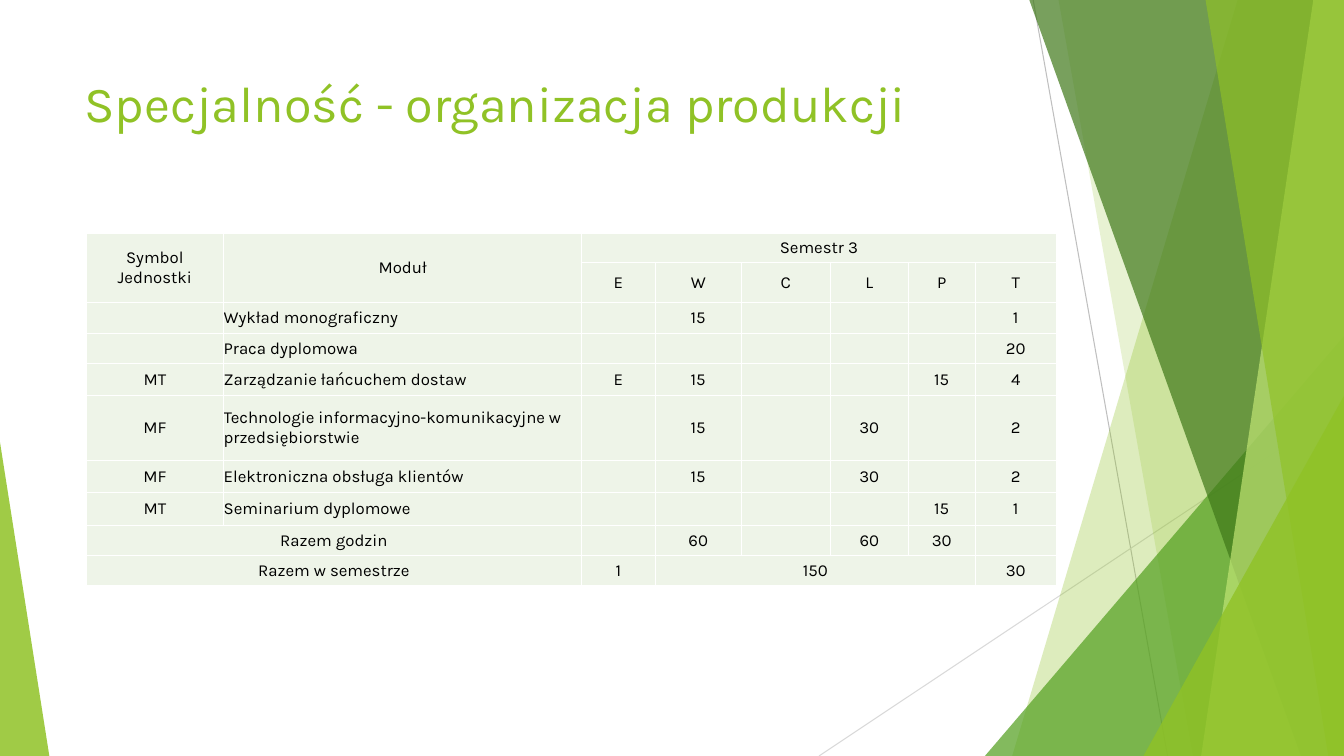
from dataclasses import dataclass

from pptx import Presentation
from pptx.dml.color import RGBColor
from pptx.enum.shapes import MSO_CONNECTOR as Connector, MSO_SHAPE as Preset
from pptx.enum.text import MSO_ANCHOR as Anchor, PP_ALIGN as Align
from pptx.oxml import parse_xml
from pptx.oxml.ns import nsdecls, qn
from pptx.oxml.xmlchemy import OxmlElement
from pptx.util import Pt

PX = 9525  # EMU in one px, 96 px to the inch
WIDTH, HEIGHT = 1280, 720
FONT = "Karla"

WHITE = RGBColor(0xFF, 0xFF, 0xFF)
BLACK = RGBColor(0, 0, 0)
GRAY = RGBColor(0xBF, 0xBF, 0xBF)
PALE_GRAY = RGBColor(0xD9, 0xD9, 0xD9)
LIME = RGBColor(0x90, 0xC2, 0x26)
PALE_LIME = RGBColor(0xC0, 0xE4, 0x74)
GREEN = RGBColor(0x54, 0xA0, 0x21)
DARK_GREEN = RGBColor(0x3F, 0x78, 0x19)
CELL_GREEN = RGBColor(0xEE, 0xF4, 0xE8)


@dataclass(frozen=True)
class Ray:
    start: tuple[int, int]
    end: tuple[int, int]
    color: RGBColor


@dataclass(frozen=True)
class Band:
    """Full-height area from a slanted left edge to the right slide edge."""
    top_x: int
    bottom_x: int
    color: RGBColor
    opacity: int


@dataclass(frozen=True)
class Wedge:
    """Right triangle standing on the bottom slide edge; apex 0 is left, 1 is right."""
    left: int
    top: int
    width: int
    apex: int
    color: RGBColor
    opacity: int


@dataclass(frozen=True)
class Row:
    height: int
    space: float
    texts: tuple[str, ...]


RAYS = [
    Ray((984, 0), (1112, HEIGHT), GRAY),
    Ray((WIDTH, 387), (780, HEIGHT), PALE_GRAY),
]
FACETS = [
    Band(1179, 964, LIME, 30),
    Band(1008, 1136, LIME, 20),
    Wedge(938, 320, 342, 1, GREEN, 72),
    Band(980, 1239, DARK_GREEN, 70),
    Band(1251, 1144, PALE_LIME, 70),
    Band(1148, 1265, LIME, 65),
    Wedge(1089, 377, 191, 1, LIME, 80),
    Wedge(0, 421, 47, 0, LIME, 85),
]

COLUMN_WIDTHS = [131, 341, 70, 82, 85, 74, 64, 77]
ROWS = [
    Row(28, 2, ("Symbol\nJednostki", "Moduł", "Semestr 3", "", "", "", "", "")),
    Row(37, 2, ("", "", "E", "W", "C", "L", "P", "T")),
    Row(29, 0.4, ("", "Wykład monograficzny", "", "15", "", "", "", "1")),
    Row(29, 0.4, ("", "Praca dyplomowa", "", "", "", "", "", "20")),
    Row(30, 0.4, ("MT", "Zarządzanie łańcuchem dostaw", "E", "15", "", "", "15", "4")),
    Row(62, 0.4, ("MF", "Technologie informacyjno-komunikacyjne w przedsiębiorstwie",
                  "", "15", "", "30", "", "2")),
    Row(31, 0.4, ("MF", "Elektroniczna obsługa klientów", "", "15", "", "30", "", "2")),
    Row(31, 0.4, ("MT", "Seminarium dyplomowe", "", "", "", "", "15", "1")),
    Row(29, 0.5, ("Razem godzin", "", "", "60", "", "60", "30", "")),
    Row(28, 1, ("Razem w semestrze", "", "1", "150", "", "", "", "30")),
]
MODULE_COLUMN, MODULE_ROWS = 1, range(2, 8)
MERGES = [((0, 0), (1, 0)), ((0, 1), (1, 1)), ((0, 2), (0, 7)),
          ((8, 0), (8, 1)), ((9, 0), (9, 1)), ((9, 3), (9, 6))]
# Space before and after, where a cell differs from its row
SPACING = {(0, 0): (4, 2), (0, 1): (9, 0), (8, 0): (1, 1), (9, 7): (0.5, 0.5)}


def add_run(paragraph, text: str, size: int, color: RGBColor) -> None:
    run = paragraph.add_run()
    run.text = text
    run.font.name = FONT
    run.font.size = Pt(size)
    run.font.color.rgb = color


def draw_ray(shapes, ray: Ray) -> None:
    line = shapes.add_connector(
        Connector.STRAIGHT, *(value * PX for value in ray.start + ray.end))
    line.line.color.rgb = ray.color
    line.line.width = Pt(0.75)
    line.element.spPr.append(OxmlElement("a:effectLst"))


def draw_facet(shapes, facet: Band | Wedge) -> None:
    if isinstance(facet, Band):
        outline = shapes.build_freeform(facet.top_x, -1, scale=PX)
        outline.add_line_segments(
            [(WIDTH, -1), (WIDTH, HEIGHT), (facet.bottom_x, HEIGHT)], close=True)
        shape = outline.convert_to_shape()
    else:
        shape = shapes.add_shape(
            Preset.ISOSCELES_TRIANGLE, facet.left * PX, facet.top * PX,
            facet.width * PX, (HEIGHT - facet.top) * PX)
        shape.adjustments[0] = facet.apex
    shape.shadow.inherit = False
    shape.line.fill.background()
    shape.fill.solid()
    shape.fill.fore_color.rgb = facet.color
    alpha = OxmlElement("a:alpha")
    alpha.set("val", str(facet.opacity * 1000))
    shape.element.spPr.find(".//" + qn("a:srgbClr")).append(alpha)


def draw_title(shapes, text: str) -> None:
    title = shapes.add_textbox(71 * PX, 64 * PX, 902 * PX, 138 * PX)
    title.text_frame.word_wrap = True
    add_run(title.text_frame.paragraphs[0], text, 36, LIME)


def add_borders(cell) -> None:
    properties = cell._tc.get_or_add_tcPr()
    for index, side in enumerate(("lnL", "lnR", "lnT", "lnB")):
        properties.insert(index, parse_xml(
            f'<a:{side} {nsdecls("a")} w="12700"><a:solidFill>'
            f'<a:srgbClr val="{WHITE}"/></a:solidFill></a:{side}>'))


def fill_cell(cell, text: str, align: Align, spacing: tuple[float, float]) -> None:
    cell.fill.solid()
    cell.fill.fore_color.rgb = CELL_GREEN
    add_borders(cell)
    cell.margin_left = cell.margin_right = cell.margin_top = cell.margin_bottom = 0
    cell.vertical_anchor = Anchor.MIDDLE
    paragraph = cell.text_frame.paragraphs[0]
    paragraph.alignment = align
    paragraph.space_before, paragraph.space_after = map(Pt, spacing)
    for index, line in enumerate(text.split("\n") if text else []):
        if index:
            paragraph.add_line_break()
        add_run(paragraph, line, 12, BLACK)
    if not text:  # keeps empty cells from stretching their row
        paragraph._p.get_or_add_endParaRPr().set("sz", "1200")


def draw_schedule(shapes) -> None:
    heights = [row.height for row in ROWS]
    table = shapes.add_table(
        len(ROWS), len(COLUMN_WIDTHS), 82 * PX, 222 * PX,
        sum(COLUMN_WIDTHS) * PX, sum(heights) * PX).table
    table.first_row = table.horz_banding = False
    for column, width in zip(table.columns, COLUMN_WIDTHS):
        column.width = width * PX
    for r, row in enumerate(ROWS):
        table.rows[r].height = row.height * PX
        for c, text in enumerate(row.texts):
            is_module = c == MODULE_COLUMN and r in MODULE_ROWS
            fill_cell(table.cell(r, c), text, Align.LEFT if is_module else Align.CENTER,
                      SPACING.get((r, c), (row.space, row.space)))
    for first, last in MERGES:
        table.cell(*first).merge(table.cell(*last))


def main() -> None:
    deck = Presentation()
    deck.slide_width, deck.slide_height = WIDTH * PX, HEIGHT * PX
    shapes = deck.slides.add_slide(deck.slide_layouts[6]).shapes
    for ray in RAYS:
        draw_ray(shapes, ray)
    for facet in FACETS:
        draw_facet(shapes, facet)
    draw_title(shapes, "Specjalność - organizacja produkcji")
    draw_schedule(shapes)
    deck.save("out.pptx")


if __name__ == "__main__":
    main()
